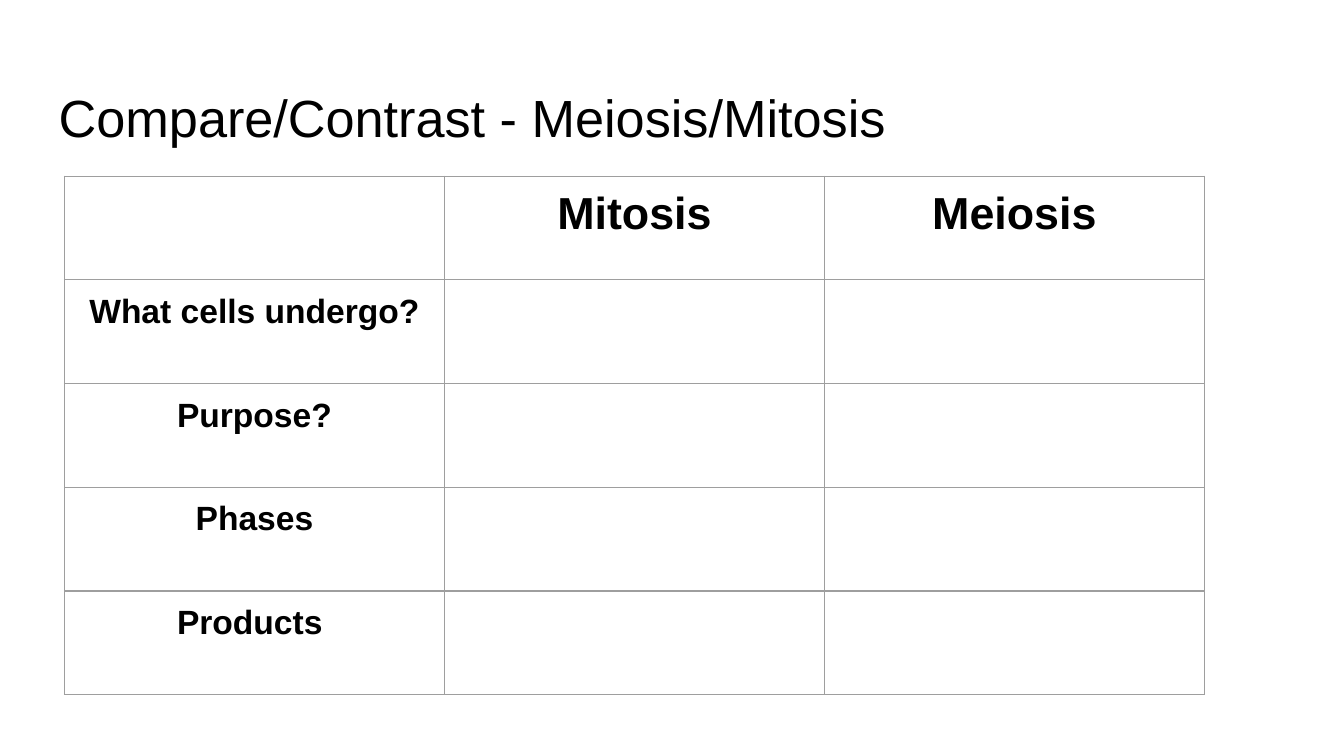
from collections import namedtuple

from pptx import Presentation
from pptx.dml.color import RGBColor
from pptx.enum.text import MSO_ANCHOR as Anchor, MSO_AUTO_SIZE as AutoSize, PP_ALIGN as Align
from pptx.oxml import parse_xml
from pptx.oxml.ns import nsdecls
from pptx.util import Cm, Pt

Box = namedtuple("Box", "left top width height")

BLACK = RGBColor(0x00, 0x00, 0x00)
WHITE = RGBColor(0xFF, 0xFF, 0xFF)
GREY = RGBColor(0x9E, 0x9E, 0x9E)
FONT = "Arial"
INSET = Cm(0.25)
BORDER = Pt(0.75)

HEADINGS = ["", "Mitosis", "Meiosis"]
QUESTIONS = ["What cells undergo?", "Purpose?", "Phases", "Products "]


def set_margins(target):
    target.margin_left = target.margin_right = INSET
    target.margin_top = target.margin_bottom = INSET


def style_paragraph(para, size, align, bold=False):
    para.alignment = align
    para.font.name = FONT
    para.font.size = Pt(size)
    para.font.bold = bold
    para.font.color.rgb = BLACK


def add_borders(cell):
    properties = cell._tc.get_or_add_tcPr()
    for side in ("lnL", "lnR", "lnT", "lnB"):
        properties.append(parse_xml(
            f'<a:{side} {nsdecls("a")} w="{BORDER}"><a:solidFill>'
            f'<a:srgbClr val="{GREY}"/></a:solidFill></a:{side}>'))


def place_title(page, box, text):
    title = page.shapes.title
    title.left, title.top, title.width, title.height = box
    frame = title.text_frame
    frame.text = text
    frame.word_wrap = True
    frame.auto_size = AutoSize.NONE
    frame.vertical_anchor = Anchor.TOP
    set_margins(frame)
    para = frame.paragraphs[0]
    style_paragraph(para, 28, Align.LEFT)
    para.line_spacing = 1.1


def place_comparison(page, box, headings, questions):
    rows = [headings] + [[question] + [""] * (len(headings) - 1) for question in questions]
    table = page.shapes.add_table(len(rows), len(headings), *box).table
    table.first_row = table.horz_banding = False
    for row_index, texts in enumerate(rows):
        size = 24 if row_index == 0 else 18
        for column_index, text in enumerate(texts):
            cell = table.cell(row_index, column_index)
            cell.text = text
            cell.vertical_anchor = Anchor.TOP
            set_margins(cell)
            add_borders(cell)
            cell.fill.background()
            style_paragraph(cell.text_frame.paragraphs[0], size, Align.CENTER, bold=True)


def main():
    deck = Presentation()
    deck.slide_width, deck.slide_height = Cm(25.4), Cm(14.29)
    page = deck.slides.add_slide(deck.slide_layouts[5])
    page.background.fill.solid()
    page.background.fill.fore_color.rgb = WHITE
    place_title(page, Box(Cm(0.86), Cm(1.24), Cm(23.67), Cm(1.6)),
                "Compare/Contrast - Meiosis/Mitosis")
    place_comparison(page, Box(Cm(1.22), Cm(3.33), Cm(21.54), Cm(9.8)), HEADINGS, QUESTIONS)
    deck.save("out.pptx")


if __name__ == "__main__":
    main()
